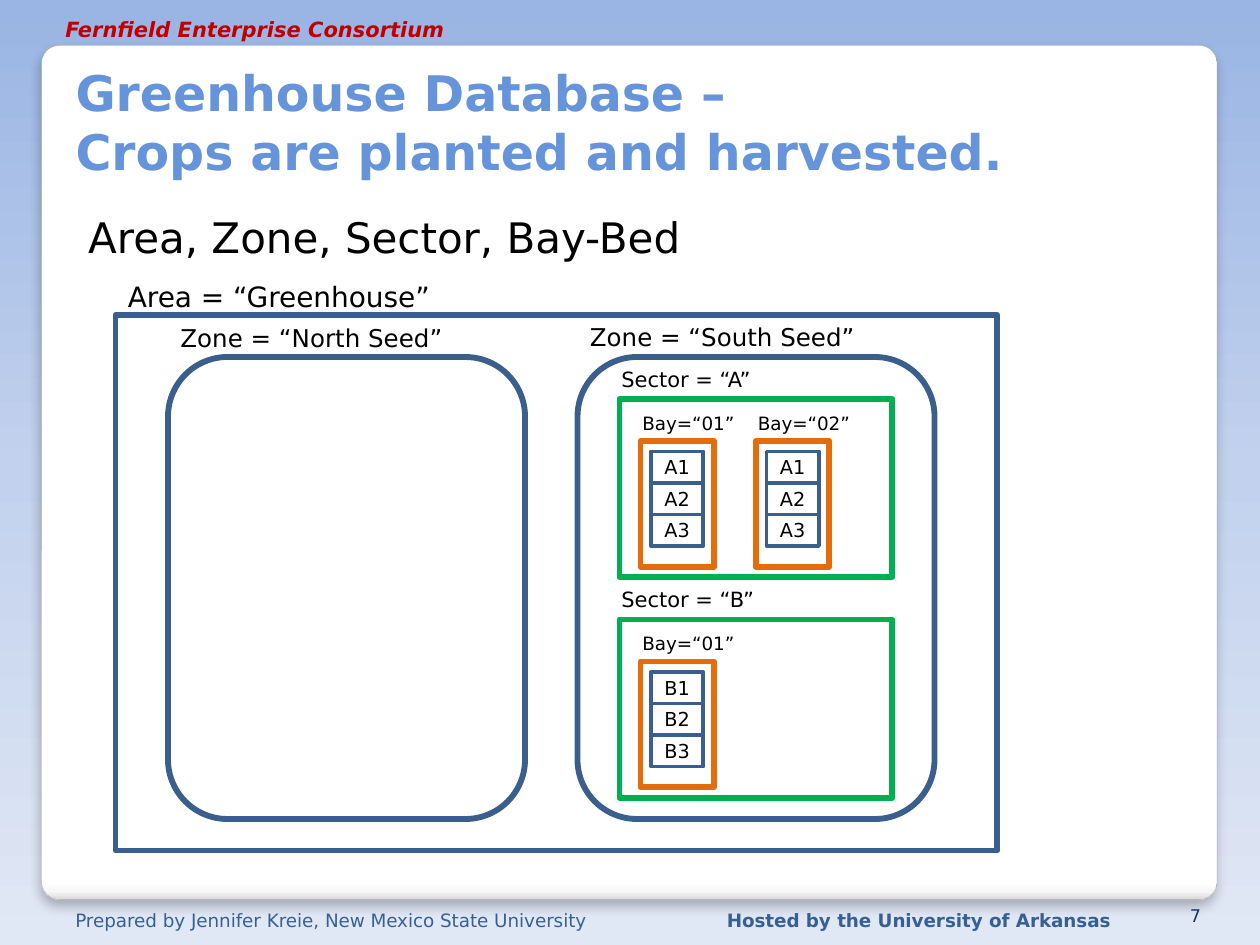
from pptx import Presentation
from pptx.dml.color import RGBColor
from pptx.enum.shapes import MSO_SHAPE
from pptx.enum.text import MSO_ANCHOR, MSO_AUTO_SIZE, PP_ALIGN
from pptx.oxml import parse_xml
from pptx.oxml.ns import nsdecls, qn
from pptx.util import Inches, Pt

FONT = "DejaVu Sans"
BLACK = RGBColor(0x00, 0x00, 0x00)
TITLE_BLUE = RGBColor(0x65, 0x94, 0xDA)
FOOTER_BLUE = RGBColor(0x37, 0x60, 0x92)
NUMBER_BLUE = RGBColor(0x17, 0x37, 0x5E)
HEADER_RED = RGBColor(0xC0, 0x00, 0x00)
BOX_BLUE = RGBColor(0x3A, 0x5F, 0x8C)
SECTOR_GREEN = RGBColor(0x00, 0xB0, 0x50)
BAY_ORANGE = RGBColor(0xE4, 0x6C, 0x0A)
PANEL_GRAY = RGBColor(0xA4, 0xA4, 0xA4)
BACKGROUND_STOPS = [(0, "9AB5E4"), (50, "C2D1ED"), (100, "E1E8F5")]
PANEL_STOPS = [(0, "FFFFFF"), (98, "FFFFFF"), (99, "F7F7F7"), (100, "DADADA")]

TITLE = "Greenhouse Database – \vCrops are planted and harvested."
SUBTITLE = "Area, Zone, Sector, Bay-Bed"
MARGIN_TEXTS = [
    ("Prepared by Jennifer Kreie, New Mexico State University",
     (0.5, 7.17, 4.46, 0.23), dict(size=10.5, color=FOOTER_BLUE)),
    ("Hosted by the University of Arkansas",
     (5.67, 7.17, 3.33, 0.23), dict(size=10.5, color=FOOTER_BLUE, bold=True)),
    ("Fernfield Enterprise Consortium",
     (0.42, 0.08, 3.33, 0.23), dict(size=12, color=HEADER_RED, bold=True, italic=True)),
    ("7", (9.13, 7.17, 0.5, 0.23),
     dict(size=10, color=NUMBER_BLUE, align=PP_ALIGN.RIGHT, anchor=MSO_ANCHOR.BOTTOM)),
]
AREA = "Area = “Greenhouse”"
ZONES = [
    ("Zone = “North Seed”", 0.32, []),
    ("Zone = “South Seed”", 0.33, [
        ("Sector = “A”", [("Bay=“01”", ["A1", "A2", "A3"]), ("Bay=“02”", ["A1", "A2", "A3"])]),
        ("Sector = “B”", [("Bay=“01”", ["B1", "B2", "B3"])]),
    ]),
]

GRID = 1 / 12
BOX_LINE, BED_LINE = 3.35, 2.25


def place(shape, box):
    """Move and size a shape in inches."""
    shape.left, shape.top, shape.width, shape.height = map(Inches, box)


def write(shape, text, size=12, color=BLACK, bold=False, italic=False,
          align=PP_ALIGN.LEFT, anchor=MSO_ANCHOR.TOP, insets=(0.1, 0.05, 0.1, 0.05)):
    """Write formatted text into a shape and return its paragraph."""
    frame = shape.text_frame
    frame.word_wrap = True
    frame.auto_size = MSO_AUTO_SIZE.NONE
    frame.vertical_anchor = anchor
    frame.margin_left, frame.margin_top, frame.margin_right, frame.margin_bottom = map(Inches, insets)
    paragraph = frame.paragraphs[0]
    paragraph.text = text
    paragraph.alignment = align
    for run in paragraph.runs:
        font = run.font
        font.name, font.size, font.bold, font.italic = FONT, Pt(size), bold, italic
        font.color.rgb = color
    return paragraph


def add_text(slide, text, box, **style):
    """Add a text box."""
    write(slide.shapes.add_textbox(*map(Inches, box)), text, **style)


def add_box(slide, box, color, width=BOX_LINE, preset=MSO_SHAPE.RECTANGLE):
    """Add an unfilled outline shape."""
    shape = slide.shapes.add_shape(preset, *map(Inches, box))
    shape.shadow.inherit = False
    shape.fill.background()
    shape.line.color.rgb = color
    shape.line.width = Pt(width)
    return shape


def grid_box(column, row, columns, rows):
    """Convert grid units to inches."""
    return tuple(value * GRID for value in (column, row, columns, rows))


def set_gradient(owner, fill, stops):
    """Fill an object with a gradient from top to bottom."""
    fill.gradient()
    fill.gradient_angle = 270
    stop_list = owner.element.find(".//" + qn("a:gsLst"))
    for stop in list(stop_list):
        stop_list.remove(stop)
    for position, color in stops:
        stop_list.append(parse_xml(
            f'<a:gs {nsdecls("a")} pos="{position * 1000}"><a:srgbClr val="{color}"/></a:gs>'))


def add_panel(slide):
    """Add the white rounded panel with its soft shadow."""
    panel = add_box(slide, (0.33, 0.36, 9.33, 6.78), PANEL_GRAY, 0.16, MSO_SHAPE.ROUNDED_RECTANGLE)
    panel.adjustments[0] = 0.021
    set_gradient(panel, panel.fill, PANEL_STOPS)
    panel.element.spPr.find(qn("a:effectLst")).append(parse_xml(
        f'<a:outerShdw {nsdecls("a")} blurRad="{Pt(6)}" dist="{Pt(4)}" dir="5400000" '
        'algn="t" rotWithShape="0"><a:srgbClr val="000000"><a:alpha val="25000"/>'
        '</a:srgbClr></a:outerShdw>'))
    slide.shapes._spTree.insert(2, panel.element)


def add_headings(slide):
    """Fill the title and body placeholders."""
    title, body = slide.placeholders
    place(title, (0.5, 0.33, 8.95, 1.15))
    write(title, TITLE, size=28, color=TITLE_BLUE, bold=True, anchor=MSO_ANCHOR.BOTTOM)
    place(body, (0.5, 1.58, 8.95, 5))
    paragraph = write(body, SUBTITLE, size=24, insets=(0.2, 0.1, 0.1, 0.05))
    paragraph.space_before = Pt(2.5)
    properties = paragraph._p.get_or_add_pPr()
    properties.set("marL", str(Inches(0.29)))
    properties.set("indent", str(-Inches(0.29)))
    properties.append(parse_xml(f'<a:buNone {nsdecls("a")}/>'))


def add_bay(slide, column, row, label, beds):
    """Add a bay with its stacked beds."""
    left, top, width, height = grid_box(column, row, 7, 12)
    add_box(slide, (left, top, width, height), BAY_ORANGE)
    add_text(slide, label, (left - GRID, top - 0.28, 1, 0.28), size=10.5)
    for index, bed in enumerate(beds):
        shape = add_box(slide, grid_box(column + 1, row + 1 + 3 * index, 5, 3), BOX_BLUE, BED_LINE)
        write(shape, bed, size=11, align=PP_ALIGN.CENTER, anchor=MSO_ANCHOR.MIDDLE, insets=(0, 0, 0, 0))


def add_sector(slide, column, row, label, bays):
    """Add a sector with its row of bays."""
    left, top, width, height = grid_box(column, row, 26, 17)
    add_box(slide, (left, top, width, height), SECTOR_GREEN)
    add_text(slide, label, (left - GRID, top - 0.31, 1.67, 0.3), size=12)
    for index, (bay, beds) in enumerate(bays):
        add_bay(slide, column + 2 + 11 * index, row + 4, bay, beds)


def add_zone(slide, column, row, label, label_rise, sectors):
    """Add a zone with its stacked sectors."""
    left, top, width, height = grid_box(column, row, 34, 44)
    add_box(slide, (left, top, width, height), BOX_BLUE, preset=MSO_SHAPE.ROUNDED_RECTANGLE)
    add_text(slide, label, (left, top - label_rise, 3.08, 0.34), size=14)
    for index, (sector, bays) in enumerate(sectors):
        add_sector(slide, column + 4, row + 4 + 21 * index, sector, bays)


def main():
    """Build the greenhouse slide."""
    presentation = Presentation()
    presentation.slide_width, presentation.slide_height = Inches(10), Inches(7.5)
    slide = presentation.slides.add_slide(presentation.slide_layouts[1])
    set_gradient(slide, slide.background.fill, BACKGROUND_STOPS)
    add_panel(slide)
    add_headings(slide)
    for text, box, style in MARGIN_TEXTS:
        add_text(slide, text, box, **style)
    left, top, width, height = grid_box(11, 30, 84, 51)
    add_box(slide, (left, top, width, height), BOX_BLUE)
    add_text(slide, AREA, (left, top - 0.33, 3.08, 0.37), size=16)
    for index, (zone, label_rise, sectors) in enumerate(ZONES):
        add_zone(slide, 16 + 39 * index, 34, zone, label_rise, sectors)
    presentation.save("out.pptx")


if __name__ == "__main__":
    main()
